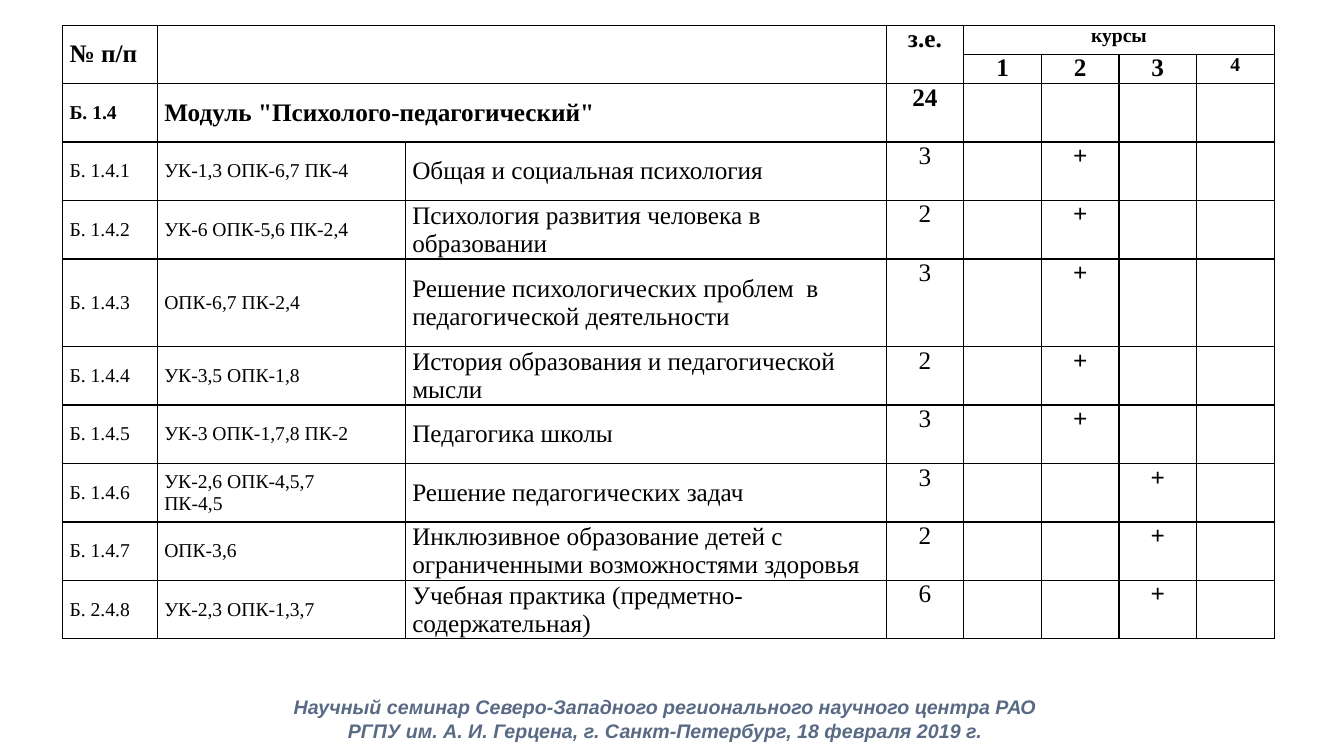
from dataclasses import dataclass

from lxml import etree
from pptx import Presentation
from pptx.dml.color import RGBColor
from pptx.enum.text import MSO_ANCHOR, PP_ALIGN
from pptx.oxml.ns import qn
from pptx.util import Inches, Pt

LEFT, CENTER = PP_ALIGN.LEFT, PP_ALIGN.CENTER
TOP, MIDDLE = MSO_ANCHOR.TOP, MSO_ANCHOR.MIDDLE
PAGE_WIDTH, PAGE_HEIGHT = 13.33, 7.5
BLANK_LAYOUT = 6

YEARS = 4
HALF_ROW = 0.29
COLUMNS = [0.94, 2.46, 4.77] + [0.77] * (1 + YEARS)
ROWS = [HALF_ROW * halves for halves in (1, 1, 2, 2, 2, 3, 2, 2, 2, 2, 2)]
CODE, SKILLS, SUBJECT, CREDITS = range(4)
MODULE_ROW = 2

# Code, competences, subject, credits, year of study
SUBJECTS = [
    ("Б. 1.4.1", "УК-1,3 ОПК-6,7 ПК-4", "Общая и социальная психология", 3, 2),
    ("Б. 1.4.2", "УК-6 ОПК-5,6 ПК-2,4", "Психология развития человека в образовании", 2, 2),
    ("Б. 1.4.3", "ОПК-6,7 ПК-2,4",
     "Решение психологических проблем  в педагогической деятельности", 3, 2),
    ("Б. 1.4.4", "УК-3,5 ОПК-1,8", "История образования и педагогической мысли", 2, 2),
    ("Б. 1.4.5", "УК-3 ОПК-1,7,8 ПК-2", "Педагогика школы", 3, 2),
    ("Б. 1.4.6", ("УК-2,6 ОПК-4,5,7", "ПК-4,5"), "Решение педагогических задач", 3, 3),
    ("Б. 1.4.7", "ОПК-3,6",
     "Инклюзивное образование детей с ограниченными возможностями здоровья", 2, 3),
    ("Б. 2.4.8", "УК-2,3 ОПК-1,3,7", "Учебная практика (предметно-содержательная)", 6, 3),
]
FOOTER = (
    "Научный семинар Северо-Западного регионального научного центра РАО",
    "РГПУ им. А. И. Герцена, г. Санкт-Петербург, 18 февраля 2019 г.",
)


@dataclass(frozen=True)
class Theme:
    ink: str = "000000"
    footer: str = "596A85"
    table_font: str = "Times New Roman"
    footer_font: str = "Arial"
    large: int = 18
    small: int = 14
    border: int = 1
    cell_inset: float = 0.07


def write_para(para, lines, *, font, size, color, bold=False, italic=False, align=LEFT):
    """Write lines into one paragraph, with line breaks between them."""
    para.alignment = align
    for index, line in enumerate(lines):
        if index:
            para.add_line_break()
        span = para.add_run()
        span.text = line
        span.font.name = font
        span.font.size = Pt(size)
        span.font.color.rgb = RGBColor.from_string(color)
        span.font.bold = bold
        span.font.italic = italic


def draw_borders(cell, color, width):
    properties = cell._tc.get_or_add_tcPr()
    for side in ("a:lnL", "a:lnR", "a:lnT", "a:lnB"):
        line = etree.SubElement(properties, qn(side), w=str(Pt(width)))
        fill = etree.SubElement(line, qn("a:solidFill"))
        etree.SubElement(fill, qn("a:srgbClr"), val=color)


class SlideBuilder:
    def __init__(self, page, theme):
        self.page = page
        self.theme = theme

    def grid(self, left, top, columns, rows):
        """Add a plain ruled table; left and top are shares of the slide."""
        table = self.page.shapes.add_table(
            len(rows), len(columns),
            Inches(left * PAGE_WIDTH), Inches(top * PAGE_HEIGHT),
            Inches(sum(columns)), Inches(sum(rows)),
        ).table
        table.first_row = table.horz_banding = False
        for column, width in zip(table.columns, columns):
            column.width = Inches(width)
        for row, height in zip(table.rows, rows):
            row.height = Inches(height)
        for cell in table.iter_cells():
            cell.margin_left = cell.margin_right = Inches(self.theme.cell_inset)
            cell.margin_top = cell.margin_bottom = 0
            draw_borders(cell, self.theme.ink, self.theme.border)
            cell.fill.background()
            end = cell.text_frame.paragraphs[0]._p.get_or_add_endParaRPr()
            end.set("sz", str(self.theme.small * 100))
        return table

    def label(self, cell, paragraphs, *, size, bold=False, align=LEFT, anchor=MIDDLE):
        """Fill a cell with one paragraph, or with a tuple of them."""
        cell.vertical_anchor = anchor
        frame = cell.text_frame
        if isinstance(paragraphs, str):
            paragraphs = (paragraphs,)
        for index, text in enumerate(paragraphs):
            para = frame.add_paragraph() if index else frame.paragraphs[0]
            write_para(para, [text], font=self.theme.table_font, size=size,
                       color=self.theme.ink, bold=bold, align=align)

    def mark(self, cell, text, *, size=None, bold=True):
        self.label(cell, text, size=size or self.theme.large, bold=bold,
                   align=CENTER, anchor=TOP)

    def footer(self, lines, left, top, width, height):
        """Add the footer; all lengths are shares of the slide."""
        box = self.page.shapes.add_textbox(
            Inches(left * PAGE_WIDTH), Inches(top * PAGE_HEIGHT),
            Inches(width * PAGE_WIDTH), Inches(height * PAGE_HEIGHT))
        box.text_frame.word_wrap = True
        write_para(box.text_frame.paragraphs[0], lines, font=self.theme.footer_font,
                   size=self.theme.small, color=self.theme.footer,
                   bold=True, italic=True, align=CENTER)


def fill_heading(builder, table):
    theme = builder.theme
    first_year = CREDITS + 1
    table.cell(0, CODE).merge(table.cell(1, CODE))
    table.cell(0, SKILLS).merge(table.cell(1, SUBJECT))
    table.cell(0, CREDITS).merge(table.cell(1, CREDITS))
    table.cell(0, first_year).merge(table.cell(0, CREDITS + YEARS))
    builder.label(table.cell(0, CODE), "№ п/п", size=theme.large, bold=True)
    builder.mark(table.cell(0, CREDITS), "з.е.")
    builder.mark(table.cell(0, first_year), "курсы", size=theme.small)
    for year in range(1, YEARS + 1):
        size = theme.small if year == YEARS else theme.large
        builder.mark(table.cell(1, CREDITS + year), str(year), size=size)


def fill_module(builder, table):
    theme = builder.theme
    title = table.cell(MODULE_ROW, SKILLS)
    title.merge(table.cell(MODULE_ROW, SUBJECT))
    builder.label(table.cell(MODULE_ROW, CODE), "Б. 1.4", size=theme.small, bold=True)
    builder.label(title, 'Модуль "Психолого-педагогический"', size=theme.large, bold=True)
    builder.mark(table.cell(MODULE_ROW, CREDITS), "24")


def fill_subjects(builder, table):
    theme = builder.theme
    for row, (code, skills, subject, credits, year) in enumerate(SUBJECTS, MODULE_ROW + 1):
        builder.label(table.cell(row, CODE), code, size=theme.small)
        builder.label(table.cell(row, SKILLS), skills, size=theme.small)
        builder.label(table.cell(row, SUBJECT), subject, size=theme.large)
        builder.mark(table.cell(row, CREDITS), str(credits), bold=False)
        builder.mark(table.cell(row, CREDITS + year), "+")


def main():
    deck = Presentation()
    deck.slide_width, deck.slide_height = Inches(PAGE_WIDTH), Inches(PAGE_HEIGHT)
    page = deck.slides.add_slide(deck.slide_layouts[BLANK_LAYOUT])
    builder = SlideBuilder(page, Theme())
    table = builder.grid(0.0465, 0.0333, COLUMNS, ROWS)
    fill_heading(builder, table)
    fill_module(builder, table)
    fill_subjects(builder, table)
    builder.footer(FOOTER, 0, 0.913, 0.99, 0.076)
    deck.save("out.pptx")


if __name__ == "__main__":
    main()
